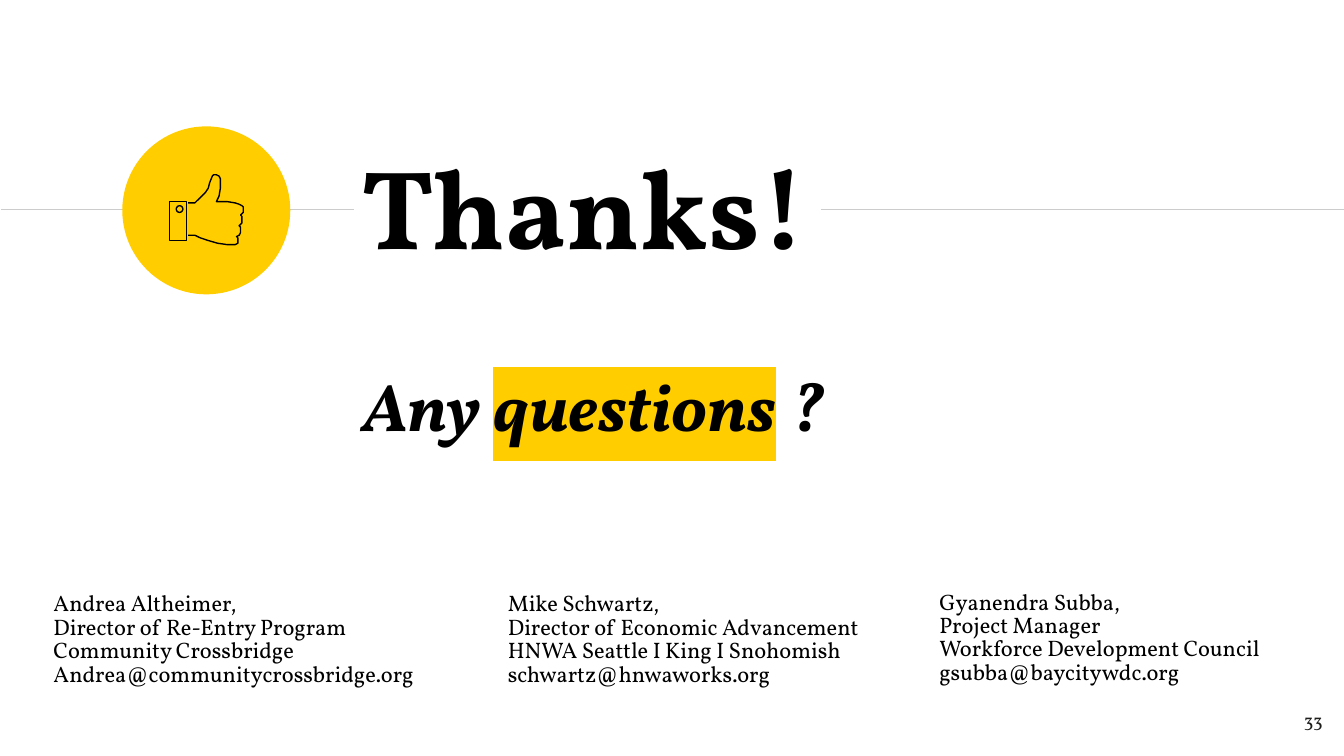
"""Build the closing slide with thanks, questions and three contacts."""
from lxml import etree
from pptx import Presentation
from pptx.dml.color import RGBColor
from pptx.enum.shapes import MSO_CONNECTOR, MSO_SHAPE
from pptx.enum.text import MSO_ANCHOR, PP_ALIGN
from pptx.oxml.ns import qn
from pptx.util import Pt

COLORS = {"ink": "000000", "accent": "FFCD00", "rule": "CCCCCC", "number": "1D1D1B"}
FONT = "Vollkorn"
HUNDREDTH_INCH = Pt(0.72)
CONTACTS = [
    (21.6, 306, 232.6, ["Andrea Altheimer,", "Director of Re-Entry Program",
                        "Community Crossbridge", "Andrea@communitycrossbridge.org"]),
    (265, 306, 216.7, ["Mike Schwartz,", "Director of Economic Advancement",
                       "HNWA Seattle I King I Snohomish", "schwartz@hnwaworks.org"]),
    (496.1, 305, 202.3, ["Gyanendra Subba,", "Project Manager",
                         "Workforce Development Council", "gsubba@baycitywdc.org"]),
]
CUFF = [(126, 150), (126, 179), (139, 179), (139, 150)]
HAND = [
    (140, 175), (145, 175), (149, 177), (155, 179), (162, 181), (169, 182), (175, 182),
    (177, 181), (177, 177), (176, 176), (178, 175), (179, 173), (179, 169), (178, 168),
    (180, 166), (180, 161), (179, 160), (181, 158), (181, 154), (180, 153), (178, 152),
    (175, 151), (169, 150), (161, 150), (163, 146), (164, 140), (164, 133), (163, 131),
    (161, 130), (159, 130), (158, 131), (156, 136), (155, 140), (153, 143), (148, 148),
    (145, 151), (140, 151),
]


def rgb(key):
    """Return the palette colour called key."""
    return RGBColor.from_string(COLORS[key])


def add_text(slide, text, left, top, width, height, size=12, color="ink", bold=False,
             italic=False, align=PP_ALIGN.LEFT, anchor=MSO_ANCHOR.TOP,
             spacing=None, before=0, marked=None):
    """Add a text box with one paragraph per line and an optional highlighted word."""
    box = slide.shapes.add_textbox(Pt(left), Pt(top), Pt(width), Pt(height))
    frame = box.text_frame
    frame.word_wrap = True
    frame.vertical_anchor = anchor
    frame.margin_left = frame.margin_right = Pt(7.2)
    frame.margin_top = frame.margin_bottom = Pt(7.2)
    for index, line in enumerate(text.split("\n")):
        paragraph = frame.add_paragraph() if index else frame.paragraphs[0]
        paragraph.alignment = align
        paragraph.line_spacing = spacing
        paragraph.space_before = Pt(before)
        head, word, tail = line.partition(marked) if marked else (line, "", "")
        for part in filter(None, (head, word, tail)):
            run = paragraph.add_run()
            run.text = part
            font = run.font
            font.name, font.size = FONT, Pt(size)
            font.bold, font.italic = bold, italic
            font.color.rgb = rgb(color)
            if part == marked:
                highlight = etree.Element(qn("a:highlight"))
                etree.SubElement(highlight, qn("a:srgbClr"), val=COLORS["accent"])
                run._r.rPr.find(qn("a:solidFill")).addnext(highlight)


def add_rule(slide, start, end, y):
    """Add a thin horizontal rule."""
    rule = slide.shapes.add_connector(MSO_CONNECTOR.STRAIGHT, Pt(start), Pt(y), Pt(end), Pt(y))
    rule.line.color.rgb = rgb("rule")
    rule.line.width = Pt(0.75)
    etree.SubElement(rule._element.spPr, qn("a:effectLst"))


def style_outline(shape):
    """Give an icon part a thin dark outline and no fill."""
    shape.shadow.inherit = False
    shape.fill.background()
    shape.line.color.rgb = rgb("ink")
    shape.line.width = Pt(0.75)


def add_outline(slide, points, close):
    """Draw an icon outline through points given in hundredths of an inch."""
    builder = slide.shapes.build_freeform(*points[0], scale=HUNDREDTH_INCH)
    builder.add_line_segments(points[1:], close=close)
    style_outline(builder.convert_to_shape())


def add_thumbs_up(slide):
    """Draw the thumbs-up icon on its round badge."""
    badge = slide.shapes.add_shape(MSO_SHAPE.OVAL, Pt(65.5), Pt(67.7), Pt(90), Pt(90))
    badge.shadow.inherit = False
    badge.fill.solid()
    badge.fill.fore_color.rgb = rgb("accent")
    badge.line.fill.background()
    add_outline(slide, CUFF, close=True)
    button = slide.shapes.add_shape(MSO_SHAPE.OVAL, Pt(94.4), Pt(110.2), Pt(3.6), Pt(3.6))
    style_outline(button)
    add_outline(slide, HAND, close=False)


def main():
    """Build and save the slide."""
    deck = Presentation()
    deck.slide_width, deck.slide_height = Pt(720), Pt(405)
    slide = deck.slides.add_slide(deck.slide_layouts[6])
    add_text(slide, "Any questions ?", 187.2, 187.9, 395.3, 61.9, size=36,
             bold=True, italic=True, before=6, marked="questions")
    add_rule(slide, 0.7, 189.4, 112.4)
    add_text(slide, "Thanks!", 186.5, 64.1, 386.6, 91.4, size=60, bold=True,
             anchor=MSO_ANCHOR.MIDDLE)
    add_rule(slide, 440, 720, 112.4)
    add_thumbs_up(slide)
    add_text(slide, "33", 672.5, 373.7, 43.2, 31, size=10, color="number",
             align=PP_ALIGN.RIGHT)
    for left, top, width, lines in CONTACTS:
        add_text(slide, "\n".join(lines), left, top, width, 69.1,
                 anchor=MSO_ANCHOR.BOTTOM, spacing=0.87)
    deck.save("out.pptx")


if __name__ == "__main__":
    main()
